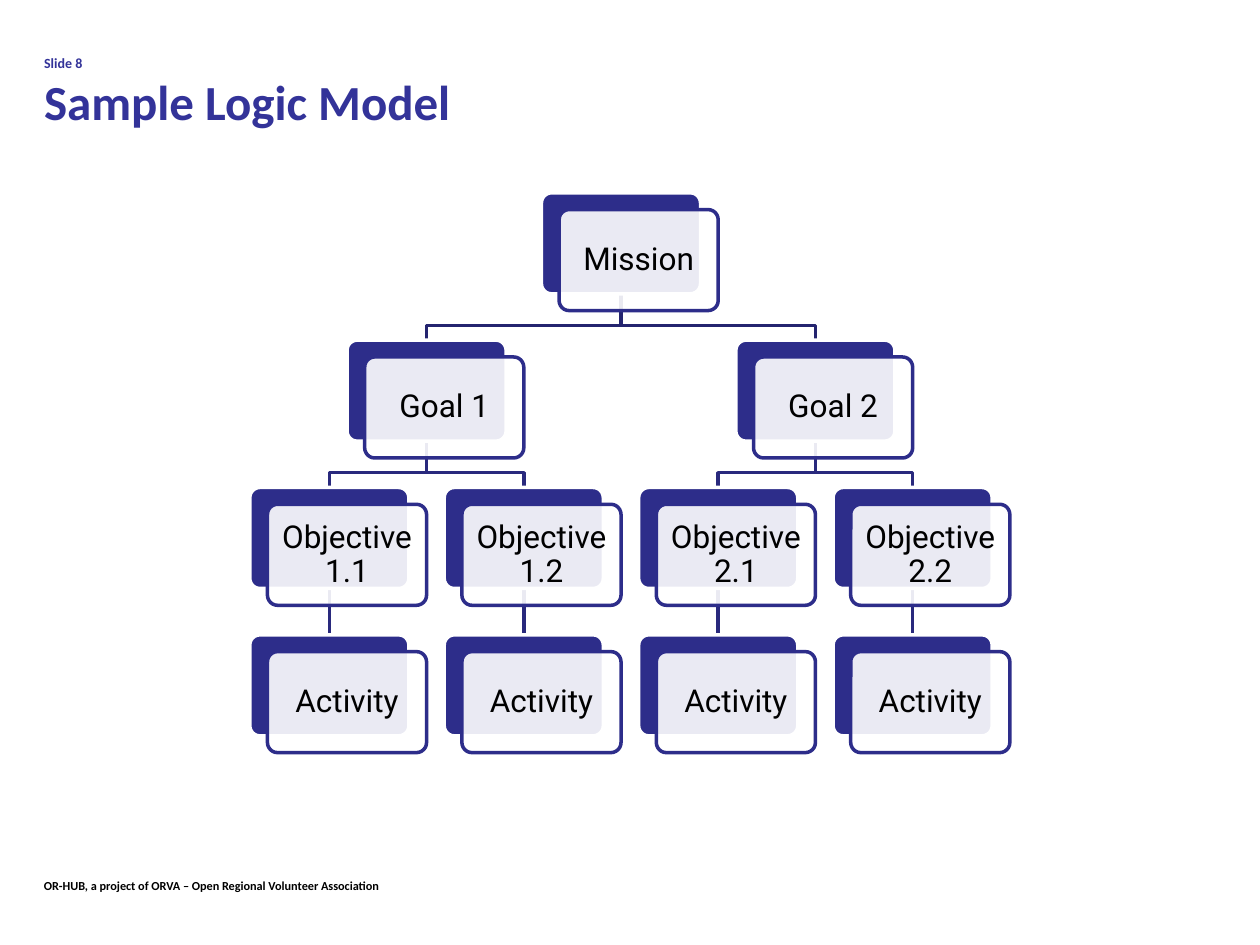
import pptx
import pptx.util
import pptx.dml.color
import pptx.enum.shapes
import pptx.enum.text
import pptx.oxml
import pptx.oxml.ns

Pt = pptx.util.Pt
ALIGN = pptx.enum.text.PP_ALIGN
ANCHOR = pptx.enum.text.MSO_ANCHOR
SHAPE = pptx.enum.shapes.MSO_SHAPE

SLIDE_LABEL = "Slide 8"
TITLE = "Sample Logic Model"
FOOTER = "OR-HUB, a project of ORVA – Open Regional Volunteer Association"
TREE = ("Mission", [
    ("Goal 1", [
        ("Objective 1.1", [("Activity", [])]),
        ("Objective 1.2", [("Activity", [])]),
    ]),
    ("Goal 2", [
        ("Objective 2.1", [("Activity", [])]),
        ("Objective 2.2", [("Activity", [])]),
    ]),
])

THEME = {
    "heading_font": "Calibri", "node_font": "Roboto",
    "title": "333399", "text": "000000", "card": "FFFFFF", "node": "2D2D8A",
    "top_link": "24246F", "link": "29297D",
    "label_size": 8, "title_size": 28, "footer_size": 7, "node_size": 18,
    "line_width": 2, "card_opacity": 90,
}

FIRST_CENTER, COLUMN_PITCH = 188.2, 111.1
FIRST_TOP, ROW_PITCH = 110.2, 84.2
NODE_WIDTH, NODE_HEIGHT = 90.9, 57.7
CARD_SHIFT_X, CARD_SHIFT_Y = 10.1, 9.6
LINK_DROP = 18
CORNER = 0.1
CARD_INSET = 4.8


def color(name):
    return pptx.dml.color.RGBColor.from_string(THEME[name])


def style_font(font, family, size, color_name, bold=False):
    font.name = THEME[family]
    font.size = Pt(THEME[size])
    font.color.rgb = color(color_name)
    font.bold = bold


def style_line(line, color_name):
    line.color.rgb = color(color_name)
    line.width = Pt(THEME["line_width"])


def place_nodes(node, level=0, first_leaf=0):
    label, children = node
    placed, leaf = [], first_leaf
    for child in children:
        placed_child, leaf = place_nodes(child, level + 1, leaf)
        placed.append(placed_child)
    if placed:
        center = (placed[0]["center"] + placed[-1]["center"]) / 2
    else:
        center = FIRST_CENTER + leaf * COLUMN_PITCH
        leaf += 1
    top = FIRST_TOP + level * ROW_PITCH
    return {"label": label, "level": level, "center": center, "top": top,
            "children": placed}, leaf


def walk(node):
    yield node
    for child in node["children"]:
        yield from walk(child)


def add_link(slide, parent, child):
    start = parent["top"] + NODE_HEIGHT
    if parent["center"] == child["center"]:
        link = slide.shapes.add_connector(
            pptx.enum.shapes.MSO_CONNECTOR.STRAIGHT,
            Pt(parent["center"]), Pt(start), Pt(child["center"]), Pt(child["top"]))
        properties = link._element.spPr
        style_line(link.line, "link")
        properties.append(pptx.oxml.parse_xml(
            "<a:effectLst %s/>" % pptx.oxml.ns.nsdecls("a")))
        return
    bend = start + LINK_DROP
    builder = slide.shapes.build_freeform(Pt(parent["center"]), Pt(start))
    corners = [(parent["center"], bend), (child["center"], bend),
               (child["center"], child["top"])]
    builder.add_line_segments([(Pt(x), Pt(y)) for x, y in corners], close=False)
    link = builder.convert_to_shape()
    link.shadow.inherit = False
    link.fill.background()
    style_line(link.line, "link" if parent["level"] else "top_link")


def add_box(slide, left, top, fill, line):
    box = slide.shapes.add_shape(SHAPE.ROUNDED_RECTANGLE, Pt(left), Pt(top),
                                 Pt(NODE_WIDTH), Pt(NODE_HEIGHT))
    box.adjustments[0] = CORNER
    box.shadow.inherit = False
    box.fill.solid()
    box.fill.fore_color.rgb = color(fill)
    style_line(box.line, line)
    return box


def add_node(slide, node):
    left = node["center"] - NODE_WIDTH / 2
    add_box(slide, left, node["top"], "node", "card")
    card = add_box(slide, left + CARD_SHIFT_X, node["top"] + CARD_SHIFT_Y, "card", "node")
    fill_color = card._element.spPr.find(
        pptx.oxml.ns.qn("a:solidFill")).find(pptx.oxml.ns.qn("a:srgbClr"))
    fill_color.append(pptx.oxml.parse_xml('<a:alpha %s val="%d"/>' % (
        pptx.oxml.ns.nsdecls("a"), THEME["card_opacity"] * 1000)))
    frame = card.text_frame
    frame.word_wrap = True
    frame.vertical_anchor = ANCHOR.MIDDLE
    frame.margin_left = frame.margin_right = Pt(CARD_INSET)
    frame.margin_top = frame.margin_bottom = Pt(CARD_INSET)
    paragraph = frame.paragraphs[0]
    paragraph.text = node["label"]
    paragraph.alignment = ALIGN.CENTER
    paragraph.line_spacing = 0.9
    style_font(paragraph.font, "node_font", "node_size", "text")


def add_title(slide):
    title = slide.shapes.title
    title.left, title.top, title.width, title.height = Pt(18), Pt(21.6), Pt(606), Pt(62.6)
    frame = title.text_frame
    frame.text = SLIDE_LABEL + "\n" + TITLE
    frame.word_wrap = True
    frame.auto_size = pptx.enum.text.MSO_AUTO_SIZE.NONE
    frame.vertical_anchor = ANCHOR.MIDDLE
    for paragraph, size in zip(frame.paragraphs, ("label_size", "title_size")):
        paragraph.alignment = ALIGN.LEFT
        style_font(paragraph.font, "heading_font", size, "title", True)


def add_footer(slide):
    footer = slide.shapes.add_textbox(Pt(18), Pt(498.2), Pt(360), Pt(15.8))
    footer.text_frame.word_wrap = True
    paragraph = footer.text_frame.paragraphs[0]
    paragraph.text = FOOTER
    style_font(paragraph.font, "heading_font", "footer_size", "text", True)


def main():
    presentation = pptx.Presentation()
    presentation.slide_width, presentation.slide_height = Pt(720), Pt(540)
    slide = presentation.slides.add_slide(presentation.slide_layouts[5])
    add_footer(slide)
    add_title(slide)
    root, leaf_count = place_nodes(TREE)
    nodes = list(walk(root))
    for node in nodes:
        for child in node["children"]:
            add_link(slide, node, child)
    for node in nodes:
        add_node(slide, node)
    presentation.save("out.pptx")


if __name__ == "__main__":
    main()
